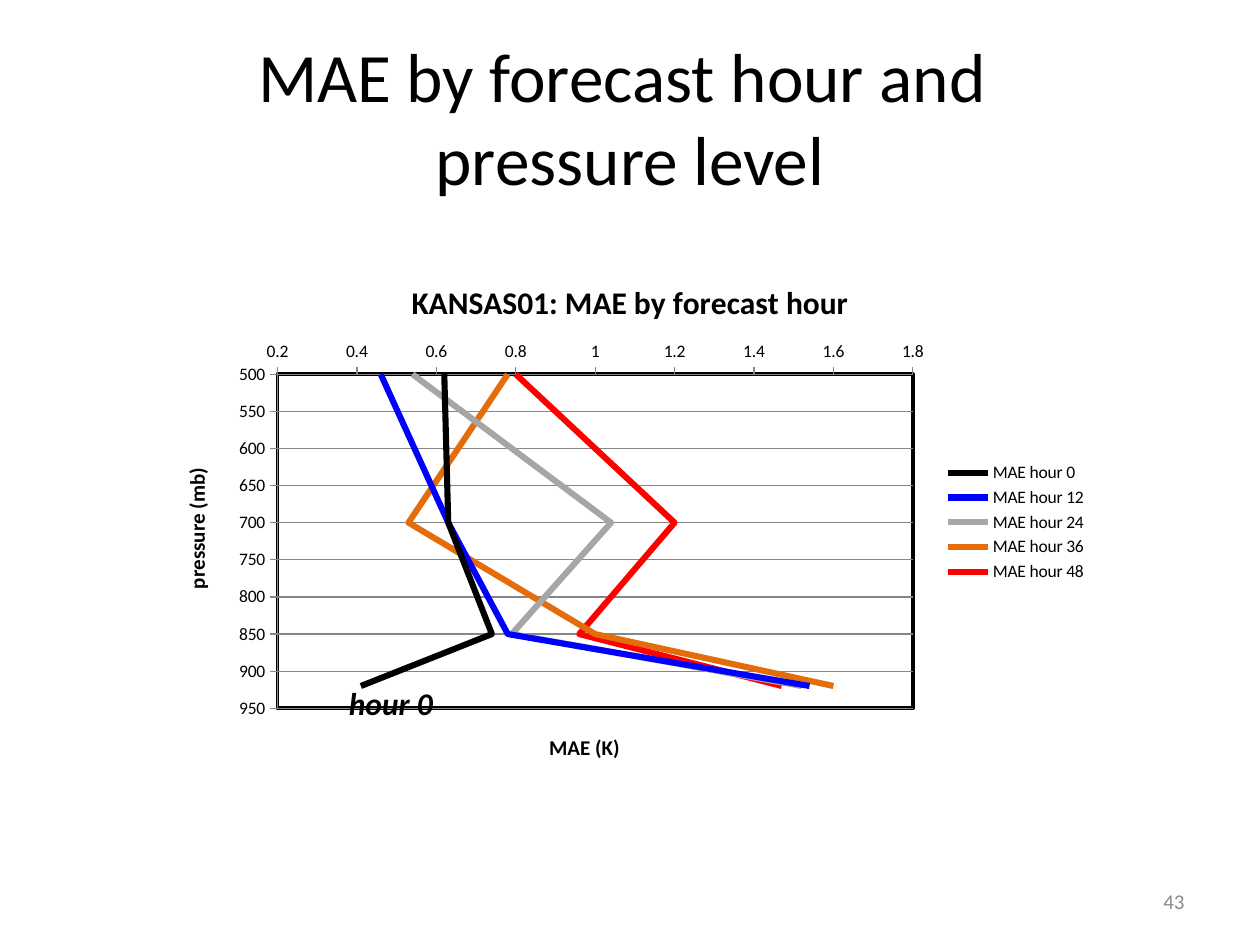
import pptx
import pptx.chart.data
import pptx.dml.color
import pptx.enum.chart
import pptx.enum.text
import pptx.oxml
import pptx.oxml.ns
import pptx.util
from pptx.util import Inches, Pt

COLORS = {
    "black": "000000",
    "blue": "0000FF",
    "gray": "A6A6A6",
    "orange": "E46C0A",
    "red": "FF0000",
    "grid": "868686",
    "number": "8C8C8C",
}
FONT = "Calibri"
PRESSURES = [920, 850, 700, 500]
ERRORS = [
    ("MAE hour 0", "black", [0.41, 0.74, 0.63, 0.62]),
    ("MAE hour 12", "blue", [1.54, 0.78, 0.63, 0.46]),
    ("MAE hour 24", "gray", [1.52, 0.79, 1.04, 0.54]),
    ("MAE hour 36", "orange", [1.6, 1, 0.53, 0.78]),
    ("MAE hour 48", "red", [1.47, 0.96, 1.2, 0.8]),
]


def add_span(para, text, size, color="black", bold=False, italic=False):
    span = para.add_run()
    span.text = text
    span.font.name = FONT
    span.font.size = Pt(size)
    span.font.bold = bold
    span.font.italic = italic
    span.font.color.rgb = pptx.dml.color.RGBColor.from_string(COLORS[color])


def set_layout(element, **fractions):
    """Place a chart part by fractions of the chart's size."""
    qn = pptx.oxml.ns.qn
    old = element.find(qn("c:layout"))
    if old is not None:
        element.remove(old)
    target = '<c:layoutTarget val="inner"/>' if "w" in fractions else ""
    modes = "".join(f'<c:{key}Mode val="edge"/>' for key in "xy")
    values = "".join(f'<c:{key} val="{value}"/>' for key, value in fractions.items())
    layout = pptx.oxml.parse_xml(
        f'<c:layout {pptx.oxml.ns.nsdecls("c")}><c:manualLayout>'
        f"{target}{modes}{values}</c:manualLayout></c:layout>"
    )
    element.insert(0 if element.find(qn("c:tx")) is None else 1, layout)


deck = pptx.Presentation()
deck.slide_width, deck.slide_height = Inches(10), Inches(7.5)
page = deck.slides.add_slide(deck.slide_layouts[5])

# Title
title = page.shapes.title
title.left, title.top = Inches(0.5), Inches(0.3)
title.width, title.height = Inches(9), Inches(1.25)
title.text_frame.vertical_anchor = pptx.enum.text.MSO_ANCHOR.MIDDLE
para = title.text_frame.paragraphs[0]
para.alignment = pptx.enum.text.PP_ALIGN.CENTER
add_span(para, "MAE by forecast hour and ", 39.6)
para.add_line_break()
add_span(para, "pressure level", 39.6)

# Slide number
box = page.shapes.add_textbox(Inches(7.17), Inches(6.95), Inches(2.33), Inches(0.4))
box.text_frame.word_wrap = True
box.text_frame.vertical_anchor = pptx.enum.text.MSO_ANCHOR.MIDDLE
para = box.text_frame.paragraphs[0]
para.alignment = pptx.enum.text.PP_ALIGN.RIGHT
add_span(para, "43", 12, "number")

# Chart of error against pressure
data = pptx.chart.data.XyChartData()
for name, color, errors in ERRORS:
    series = data.add_series(name)
    for error, pressure in zip(errors, PRESSURES):
        series.add_data_point(error, pressure)
chart = page.shapes.add_chart(
    pptx.enum.chart.XL_CHART_TYPE.XY_SCATTER_LINES_NO_MARKERS,
    Inches(1.27), Inches(2.04), Inches(7.46), Inches(4.21), data,
).chart
chart.font.name = FONT
chart.font.size = Pt(10)
chart.font.color.rgb = pptx.dml.color.RGBColor.from_string(COLORS["black"])

chart.has_title = True
add_span(chart.chart_title.text_frame.paragraphs[0],
         "KANSAS01: MAE by forecast hour", 18, bold=True)
chart.has_legend = True
chart.legend.position = pptx.enum.chart.XL_LEGEND_POSITION.RIGHT
chart.legend.include_in_layout = False

chart.plots[0].vary_by_categories = False
for series, (name, color, errors) in zip(chart.plots[0].series, ERRORS):
    series.smooth = False
    series.format.line.width = Pt(3.5)
    series.format.line.color.rgb = pptx.dml.color.RGBColor.from_string(COLORS[color])

grid_color = pptx.dml.color.RGBColor.from_string(COLORS["grid"])
axes = [
    (chart.category_axis, "MAE (K)", 0.2, 1.8, 0.2, (0.41, 0.89)),
    (chart.value_axis, "pressure (mb)", 500, 950, 50, (0.02, 0.39)),
]
for axis, label, low, high, step, (x, y) in axes:
    axis.minimum_scale, axis.maximum_scale, axis.major_unit = low, high, step
    axis.major_tick_mark = pptx.enum.chart.XL_TICK_MARK.OUTSIDE
    axis.minor_tick_mark = pptx.enum.chart.XL_TICK_MARK.NONE
    axis.has_major_gridlines = False
    axis.tick_labels.number_format = "General"
    axis.tick_labels.number_format_is_linked = False
    axis.format.line.color.rgb = grid_color
    axis.format.line.width = Pt(0.75)
    axis.has_title = True
    add_span(axis.axis_title.text_frame.paragraphs[0], label, 12, bold=True)
    set_layout(axis.axis_title._element, x=x, y=y)
chart.value_axis.reverse_order = True
chart.value_axis.has_major_gridlines = True
chart.value_axis.major_gridlines.format.line.color.rgb = grid_color
chart.value_axis.major_gridlines.format.line.width = Pt(0.75)

plot_area = chart._chartSpace.chart.plotArea
set_layout(plot_area, x=0.125, y=0.221, w=0.676, h=0.63)
plot_area.append(pptx.oxml.parse_xml(
    f'<c:spPr {pptx.oxml.ns.nsdecls("c", "a")}>'
    '<a:solidFill><a:srgbClr val="FFFFFF"/></a:solidFill>'
    f'<a:ln w="{Pt(2.25)}"><a:solidFill><a:srgbClr val="{COLORS["black"]}"/>'
    "</a:solidFill></a:ln></c:spPr>"
))

# Label under the hour 0 line
box = page.shapes.add_textbox(Inches(2.67), Inches(5.38), Inches(0.88), Inches(0.4))
box.text_frame.word_wrap = False
box.text_frame.auto_size = pptx.enum.text.MSO_AUTO_SIZE.SHAPE_TO_FIT_TEXT
add_span(box.text_frame.paragraphs[0], "hour 0", 18, bold=True, italic=True)

deck.save("out.pptx")
